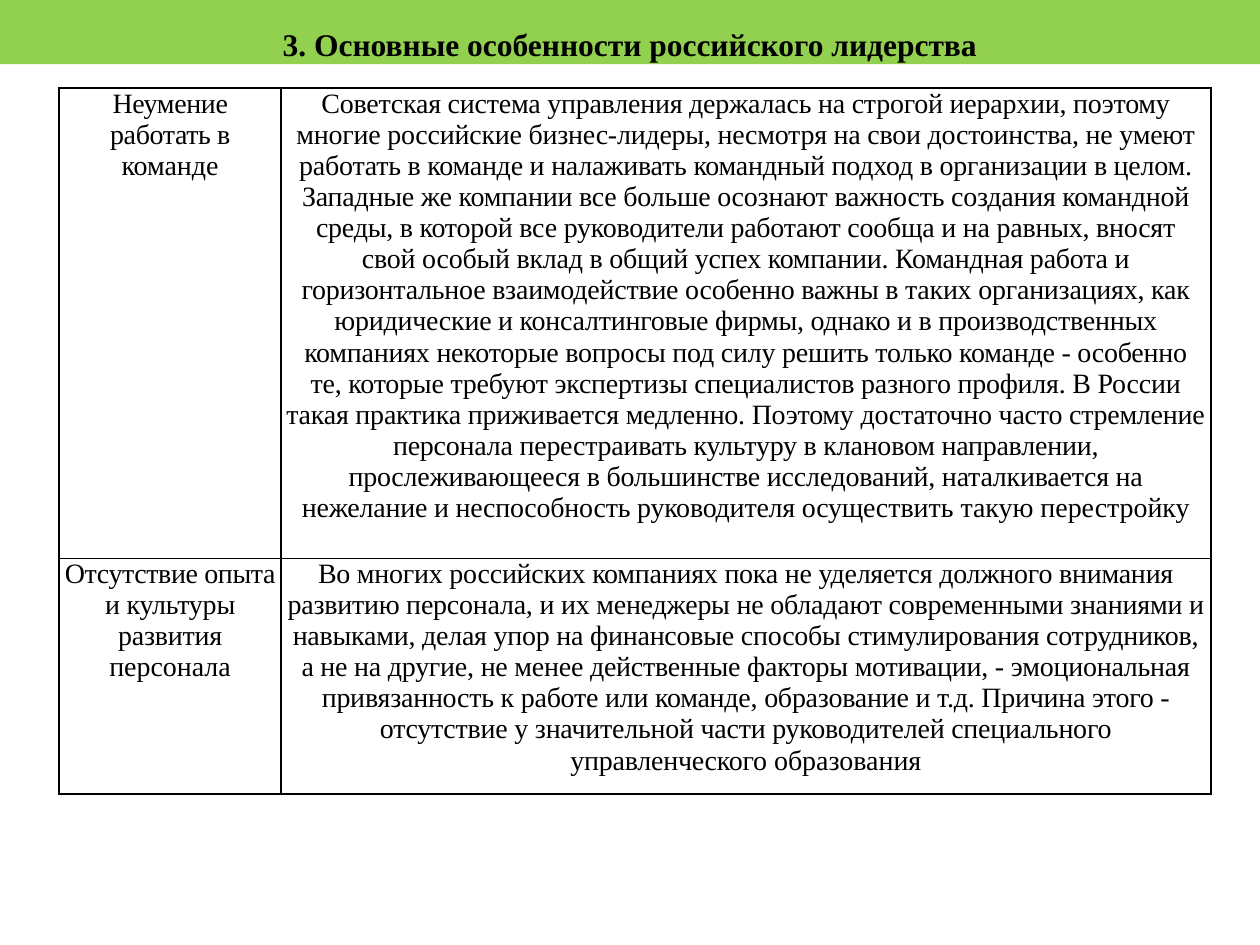
from lxml import etree
from pptx import Presentation, util as u
from pptx.dml.color import RGBColor
from pptx.enum import shapes, text
from pptx.oxml.ns import qn

TITLE = "3. Основные особенности российского лидерства"
ROWS = [
    [
        [("Неумение работать в ", -0.2), ("команде", 0)],
        [("Советская система управления держалась на строгой иерархии, поэтому многие "
          "российские бизнес-лидеры, несмотря на свои достоинства, не умеют работать в команде "
          "и налаживать командный подход в организации в целом. Западные же компании все больше "
          "осознают важность создания командной среды, в которой все руководители работают "
          "сообща и на равных, вносят свой особый вклад в общий успех компании. ", -0.1),
         ("Командная работа и горизонтальное взаимодействие особенно важны в таких "
          "организациях, как юридические и консалтинговые фирмы, однако и в производственных "
          "компаниях некоторые вопросы под силу решить только команде - особенно те, которые "
          "требуют экспертизы специалистов разного профиля. ", -0.1),
         ("В России такая практика приживается медленно. Поэтому достаточно "
          "часто стремление персонала перестраивать культуру в клановом направлении, "
          "прослеживающееся в большинстве исследований, наталкивается на нежелание и "
          "неспособность руководителя осуще", -0.1), ("ствить такую перестройку", 0)],
    ],
    [
        [("Отсутствие опыта и ", -0.2), ("культуры развития ", -0.1), ("персонала", 0)],
        [("Во многих российских компаниях пока не уделяется должного внимания развитию "
          "персонала, и их менеджеры не обладают современными знаниями и навыками, делая упор на "
          "финансовые способы стимулирования сотрудников, а не на другие, не менее действенные "
          "факторы мотивации, - эмоциональная привязанность к работе или команде, образование и "
          "т.д. Причина этого - отсутствие у значительной части руководителей специального "
          "управленческого ", -0.1), ("образования", 0)],
    ],
]


def tint(code):
    return RGBColor.from_string(code)


def write(para, words, size=16, bold=False, color="000000", face="Times New Roman", track=0):
    run = para.add_run()
    run.text = words
    font = run.font
    font.size, font.bold, font.name = u.Pt(size), bold, face
    font.color.rgb = tint(color)
    if track:
        font._element.set("spc", str(round(track * 100)))


class Deck:
    """Holds the style and the current slide."""

    green, ink = "92D050", "000000"

    def __init__(self, wide, high):
        self.show = Presentation()
        self.show.slide_width, self.show.slide_height = u.Inches(wide), u.Inches(high)
        self.slide = self.show.slides.add_slide(self.show.slide_layouts[6])

    def banner(self, words, *box):
        bar = self.slide.shapes.add_shape(shapes.MSO_SHAPE.RECTANGLE, *map(u.Inches, box))
        bar.shadow.inherit = False
        bar.fill.solid()
        bar.fill.fore_color.rgb = tint(self.green)
        bar.line.fill.background()
        frame = bar.text_frame
        frame.word_wrap = True
        frame.auto_size = text.MSO_AUTO_SIZE.SHAPE_TO_FIT_TEXT
        frame.vertical_anchor = text.MSO_ANCHOR.TOP
        para = frame.paragraphs[0]
        para.alignment = text.PP_ALIGN.CENTER
        para.line_spacing = 1.5
        write(para, words, size=18, bold=True, color=self.ink)

    def border(self, cell, width=1):
        props = cell._tc.get_or_add_tcPr()
        for spot, side in enumerate("LRTB"):
            line = etree.Element(qn(f"a:ln{side}"), w=str(u.Pt(width)))
            fill = etree.SubElement(line, qn("a:solidFill"))
            etree.SubElement(fill, qn("a:srgbClr"), val=self.ink)
            props.insert(spot, line)

    def cell(self, cell, runs):
        cell.fill.background()
        cell.margin_left = cell.margin_right = u.Inches(0.04)
        cell.margin_top = cell.margin_bottom = 0
        self.border(cell)
        para = cell.text_frame.paragraphs[0]
        para.alignment = text.PP_ALIGN.CENTER
        for words, track in runs:
            write(para, words, color=self.ink, track=track)

    def table(self, rows, left, top, wides, highs):
        box = map(u.Inches, (left, top, sum(wides), sum(highs)))
        grid = self.slide.shapes.add_table(len(rows), len(wides), *box).table
        grid.first_row = grid.horz_banding = False
        for col, wide in zip(grid.columns, wides):
            col.width = u.Inches(wide)
        for row, high, cells in zip(grid.rows, highs, rows):
            row.height = u.Inches(high)
            for cell, runs in zip(row.cells, cells):
                self.cell(cell, runs)


def main():
    deck = Deck(10, 7.5)
    deck.banner(TITLE, 0, 0, 10, 0.51)
    deck.table(ROWS, 0.47, 0.7, wides=(1.76, 7.38), highs=(3.73, 1.87))
    deck.show.save("out.pptx")


if __name__ == "__main__":
    main()
